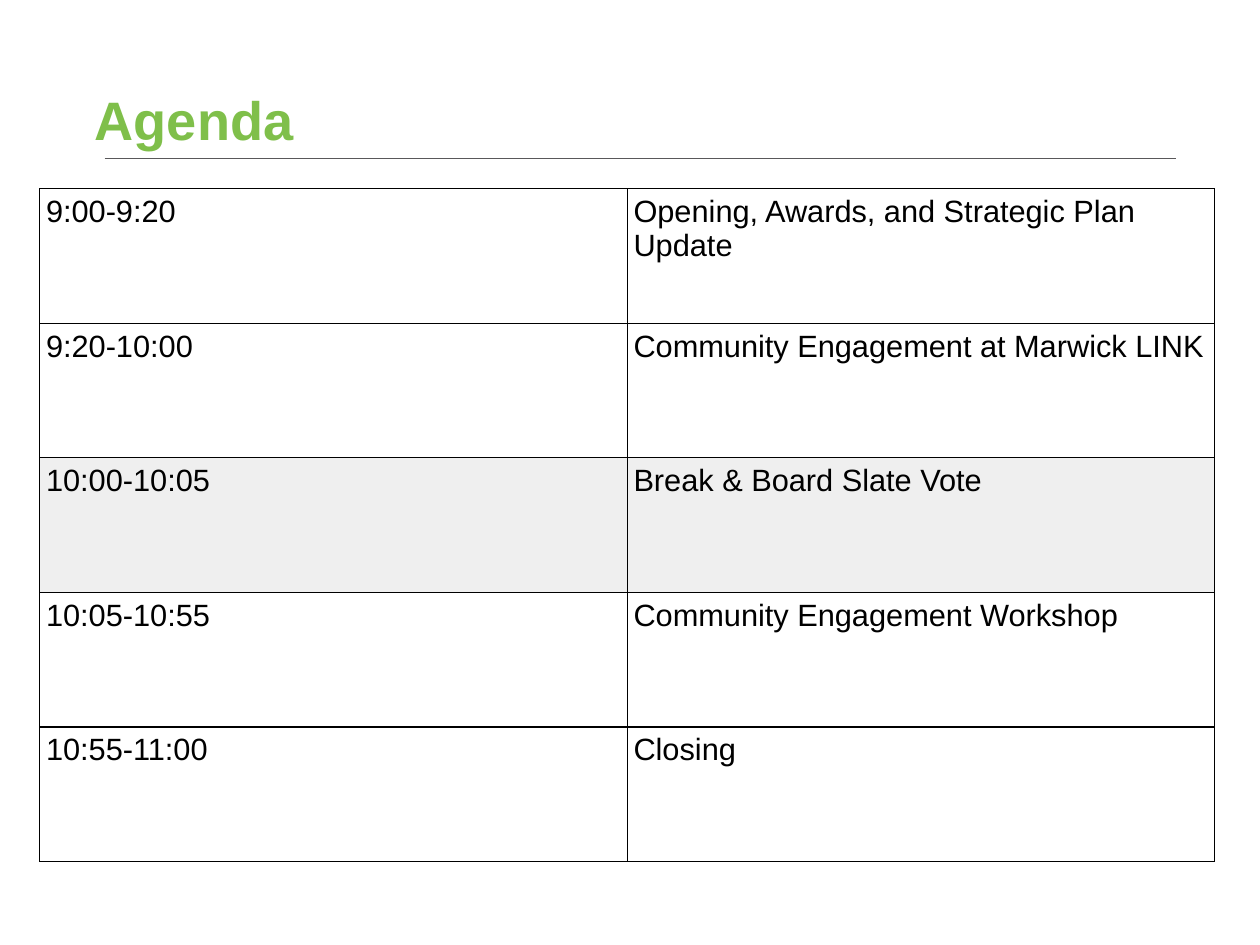
from lxml.etree import SubElement
from pptx import Presentation
from pptx.dml.color import RGBColor
from pptx.enum.shapes import MSO_CONNECTOR
from pptx.enum.text import MSO_ANCHOR
from pptx.oxml.ns import qn
from pptx.util import Pt

PX = 9144
FONT = "Arial"
GREEN, GREY, BLACK, SHADE = "7FBF4A", "59585A", "000000", "EFEFEF"
AGENDA = [
    ("9:00-9:20", "Opening, Awards, and Strategic Plan Update"),
    ("9:20-10:00", "Community Engagement at Marwick LINK"),
    ("10:00-10:05", "Break & Board Slate Vote"),
    ("10:05-10:55", "Community Engagement Workshop"),
    ("10:55-11:00", "Closing"),
]
BREAK_ROW = 2


def px(length):
    """Turn px into EMU."""
    return length * PX


def color(hex_string):
    """Turn a hex string into a colour."""
    return RGBColor.from_string(hex_string)


def add_run(paragraph, text, size, hex_string, bold=False):
    """Add one styled run to a paragraph."""
    run = paragraph.add_run()
    run.text = text
    run.font.name = FONT
    run.font.size = Pt(size)
    run.font.bold = bold
    run.font.color.rgb = color(hex_string)


def set_margins(target, margin):
    """Give a text frame or cell equal margins on all sides."""
    target.margin_left = target.margin_right = px(margin)
    target.margin_top = target.margin_bottom = px(margin)


def add_rule(slide, left, top, width):
    """Draw the thin line under the heading."""
    rule = slide.shapes.add_connector(
        MSO_CONNECTOR.STRAIGHT, px(left), px(top), px(left + width), px(top))
    rule.line.color.rgb = color(GREY)
    rule.line.width = Pt(0.75)
    SubElement(rule._element.spPr, qn("a:effectLst"))


def add_heading(slide, left, top, width, height):
    """Place the heading at the foot of its box, with the rule below."""
    add_rule(slide, left + 11, top + height + 8, width)
    box = slide.shapes.add_textbox(px(left), px(top), px(width), px(height))
    frame = box.text_frame
    frame.word_wrap = True
    frame.vertical_anchor = MSO_ANCHOR.BOTTOM
    set_margins(frame, 0)
    add_run(frame.paragraphs[0], "Agenda", 44, GREEN, bold=True)


def set_borders(cell, hex_string, width):
    """Draw a solid border on each side of a cell."""
    properties = cell._tc.get_or_add_tcPr()
    for index, side in enumerate(("lnL", "lnR", "lnT", "lnB")):
        line = properties.makeelement(qn(f"a:{side}"), {"w": str(Pt(width))})
        fill = SubElement(line, qn("a:solidFill"))
        SubElement(fill, qn("a:srgbClr"), val=hex_string)
        properties.insert(index, line)


def add_agenda(slide, left, top, width, height):
    """Fill the box with a table of times and topics in equal cells."""
    row_count, column_count = len(AGENDA), len(AGENDA[0])
    table = slide.shapes.add_table(
        row_count, column_count,
        px(left), px(top), px(width), px(height)).table
    table.first_row = table.horz_banding = False
    for row_index, texts in enumerate(AGENDA):
        for column_index, text in enumerate(texts):
            cell = table.cell(row_index, column_index)
            set_margins(cell, 7)
            if row_index == BREAK_ROW:
                cell.fill.solid()
                cell.fill.fore_color.rgb = color(SHADE)
            else:
                cell.fill.background()
            set_borders(cell, BLACK, 1)
            add_run(cell.text_frame.paragraphs[0], text, 25, BLACK)


def main():
    """Build the agenda slide and save it."""
    presentation = Presentation()
    presentation.slide_width = px(1422)
    presentation.slide_height = px(1067)
    slide = presentation.slides.add_slide(presentation.slide_layouts[6])
    add_heading(slide, 107, 2, 1209, 169)
    add_agenda(slide, 45, 213, 1326, 760)
    presentation.save("out.pptx")


if __name__ == "__main__":
    main()
